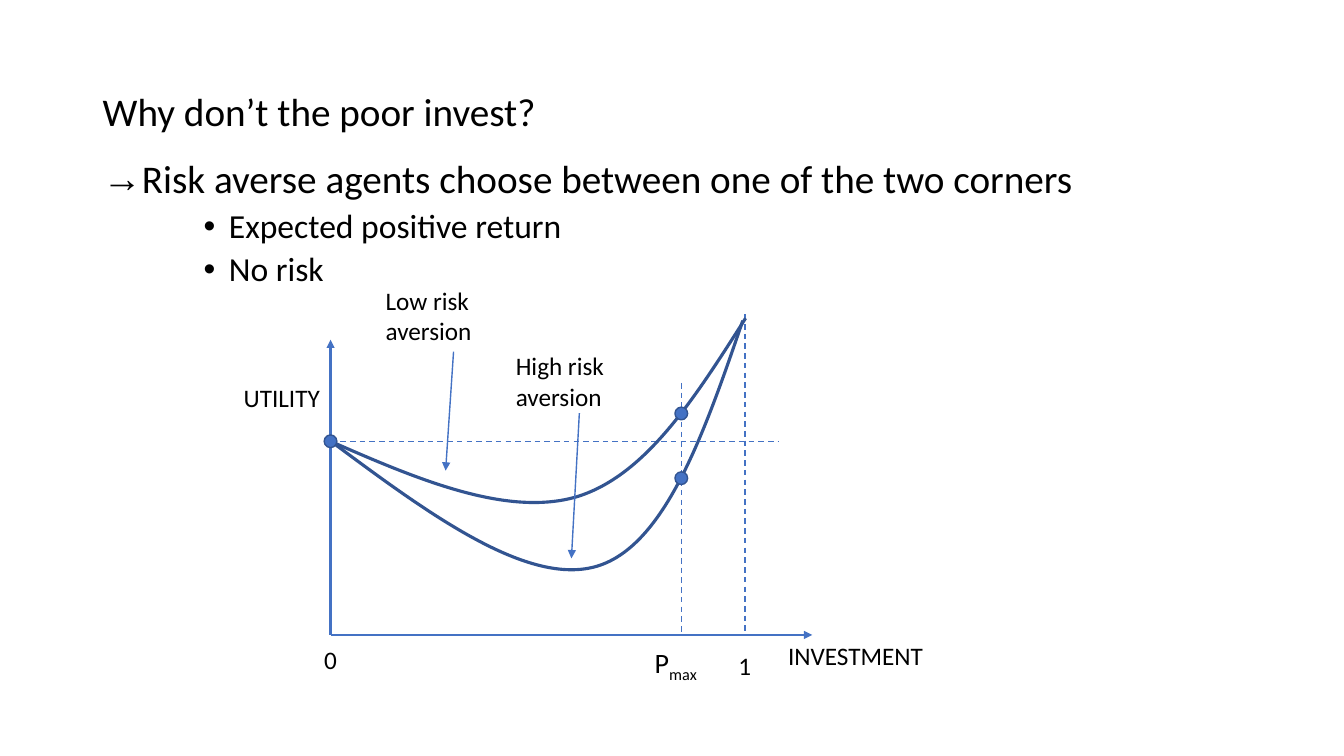
from lxml.etree import SubElement
from pptx import Presentation
from pptx.dml.color import RGBColor
from pptx.enum.dml import MSO_LINE
from pptx.enum.shapes import MSO_CONNECTOR, MSO_SHAPE
from pptx.enum.text import MSO_ANCHOR
from pptx.oxml.ns import qn
from pptx.util import Cm, Pt

FONT = "Calibri"
BLACK, BLUE, NAVY = "000000", "4472C4", "325491"


def color(hex_code):
    """Turn a hex string into a colour."""
    return RGBColor.from_string(hex_code)


def style(paragraph, size):
    """Set the font of a whole paragraph."""
    font = paragraph.font
    font.name, font.size = FONT, Pt(size)
    font.color.rgb = color(BLACK)


def add_text_frame(slide, left, top, width, height):
    """Add a wrapping text box and return its frame."""
    box = slide.shapes.add_textbox(Cm(left), Cm(top), Cm(width), Cm(height))
    box.text_frame.word_wrap = True
    return box.text_frame


def add_title(slide, left, top, width, height):
    """Write the question, centred vertically in its box."""
    frame = add_text_frame(slide, left, top, width, height)
    frame.vertical_anchor = MSO_ANCHOR.MIDDLE
    question = frame.paragraphs[0]
    question.text = "Why don’t the poor invest?"
    question.line_spacing = 0.9
    style(question, 28)


def add_argument(slide, left, top, width, height):
    """Write the main claim and its two corners as a bulleted list."""
    frame = add_text_frame(slide, left, top, width, height)
    points = [
        ("Risk averse agents choose between one of the two corners", 0, "→", 0.64, 28),
        ("Expected positive return", 2, "•", 3.18, 24),
        ("No risk", 2, "•", 3.18, 24),
    ]
    for index, (words, level, bullet, indent, size) in enumerate(points):
        point = frame.add_paragraph() if index else frame.paragraphs[0]
        point.text, point.level, point.line_spacing = words, level, 0.9
        point.space_before = Pt(5 if index else 0)
        properties = point._p.get_or_add_pPr()
        properties.set("marL", str(Cm(indent)))
        properties.set("indent", str(-Cm(0.64)))
        SubElement(properties, qn("a:buFont")).set("typeface", "Arial")
        SubElement(properties, qn("a:buChar")).set("char", bullet)
        style(point, size)


def add_line(slide, start, end, weight, dashed=False, arrow=False):
    """Draw a straight line, dashed or with an arrowhead if asked."""
    line = slide.shapes.add_connector(
        MSO_CONNECTOR.STRAIGHT, *map(Cm, start), *map(Cm, end))
    line.line.color.rgb = color(BLUE)
    line.line.width = Pt(weight)
    if dashed:
        line.line.dash_style = MSO_LINE.DASH
    if arrow:
        SubElement(line.line._get_or_add_ln(), qn("a:tailEnd")).set("type", "triangle")
    SubElement(line._element.spPr, qn("a:effectLst"))


def add_curve(slide, points):
    """Draw a smooth curve through a start and triples of Bézier points."""
    outline = [(Cm(x), Cm(y)) for x, y in points]
    builder = slide.shapes.build_freeform(*outline[0])
    builder.add_line_segments(outline[1:], close=False)
    curve = builder.convert_to_shape()
    curve.shadow.inherit = False
    curve.fill.background()
    curve.line.color.rgb = color(NAVY)
    curve.line.width = Pt(2.25)
    segments = list(curve._element.iter(qn("a:lnTo")))
    route = segments[0].getparent()
    for first in range(0, len(segments), 3):
        bend = SubElement(route, qn("a:cubicBezTo"))
        for segment in segments[first:first + 3]:
            bend.append(segment[0])
            route.remove(segment)


def add_dot(slide, center, diameter=0.32):
    """Mark a point on a curve."""
    left, top = (Cm(value - diameter / 2) for value in center)
    dot = slide.shapes.add_shape(
        MSO_SHAPE.OVAL, left, top, Cm(diameter), Cm(diameter))
    dot.shadow.inherit = False
    dot.fill.solid()
    dot.fill.fore_color.rgb = color(BLUE)
    dot.line.color.rgb = color(NAVY)
    dot.line.width = Pt(1)


def add_label(slide, corner, width, words, size=18, subscript=""):
    """Write a diagram label, with a subscript if given."""
    label = add_text_frame(slide, *corner, width, 1.02).paragraphs[0]
    label.add_run().text = words
    if subscript:
        lowered = label.add_run()
        lowered.text = subscript
        lowered._r.get_or_add_rPr().set("baseline", "-25000")
    style(label, size)


def add_utility_diagram(slide, left, top, width, height):
    """Plot utility against investment, with the origin at the box's lower left."""
    def at(x, y):
        return left + x, top + height - y

    safe_utility, p_max, full = 4.88, 8.84, 10.44
    origin, safe = at(0, 0), at(0, safe_utility)

    add_line(slide, origin, at(width, 0), 1.5, arrow=True)
    add_line(slide, origin, at(0, 7.44), 1.5, arrow=True)
    add_line(slide, safe, at(11.28, safe_utility), 1, dashed=True)
    for x, height_reached in [(p_max, 6.35), (full, height)]:
        add_line(slide, at(x, height_reached), at(x, 0), 1, dashed=True)

    low_aversion = [(0, safe_utility), (2.21, 3.91), (4.45, 2.97), (6.2, 3.48),
                    (7.95, 4.01), (9.19, 5.99), (10.46, 7.98)]
    high_aversion = [(0.05, 4.85), (2.51, 3.02), (4.98, 1.22), (6.71, 1.73),
                     (8.43, 2.24), (9.42, 5.08), (10.39, 7.92)]
    for curve in (low_aversion, high_aversion):
        add_curve(slide, [at(*point) for point in curve])

    for x, utility in [(0, safe_utility), (p_max, 5.58), (p_max, 3.95)]:
        add_dot(slide, at(x, utility))

    for words, x, y, label_width in [
        ("INVESTMENT", 11.28, 0, 4.06),
        ("UTILITY", -2.44, 6.5, 4.06),
        ("0", -0.41, -0.1, 1.02),
        ("1", 10.03, -0.25, 1.02),
        ("Low risk aversion", 1.14, 8.94, 3.89),
        ("High risk aversion", 4.42, 7.29, 3.89),
    ]:
        add_label(slide, at(x, y), label_width, words)
    add_label(slide, at(7.92, -0.15), 1.85, "P", 20, "max")

    for label_end, curve_end in [((3.1, 7.14), (2.9, 4.14)), ((6.27, 5.59), (6.07, 1.93))]:
        add_line(slide, at(*label_end), at(*curve_end), 1, arrow=True)


def main():
    """Build the slide and save it."""
    deck = Presentation()
    deck.slide_width, deck.slide_height = Cm(33.87), Cm(19.05)
    slide = deck.slides.add_slide(deck.slide_layouts[6])
    add_title(slide, 2.34, 1.02, 29.21, 3.68)
    add_argument(slide, 2.34, 3.91, 29.21, 12.09)
    add_utility_diagram(slide, 8.33, 7.92, 12.14, 8.08)
    deck.save("out.pptx")


if __name__ == "__main__":
    main()
